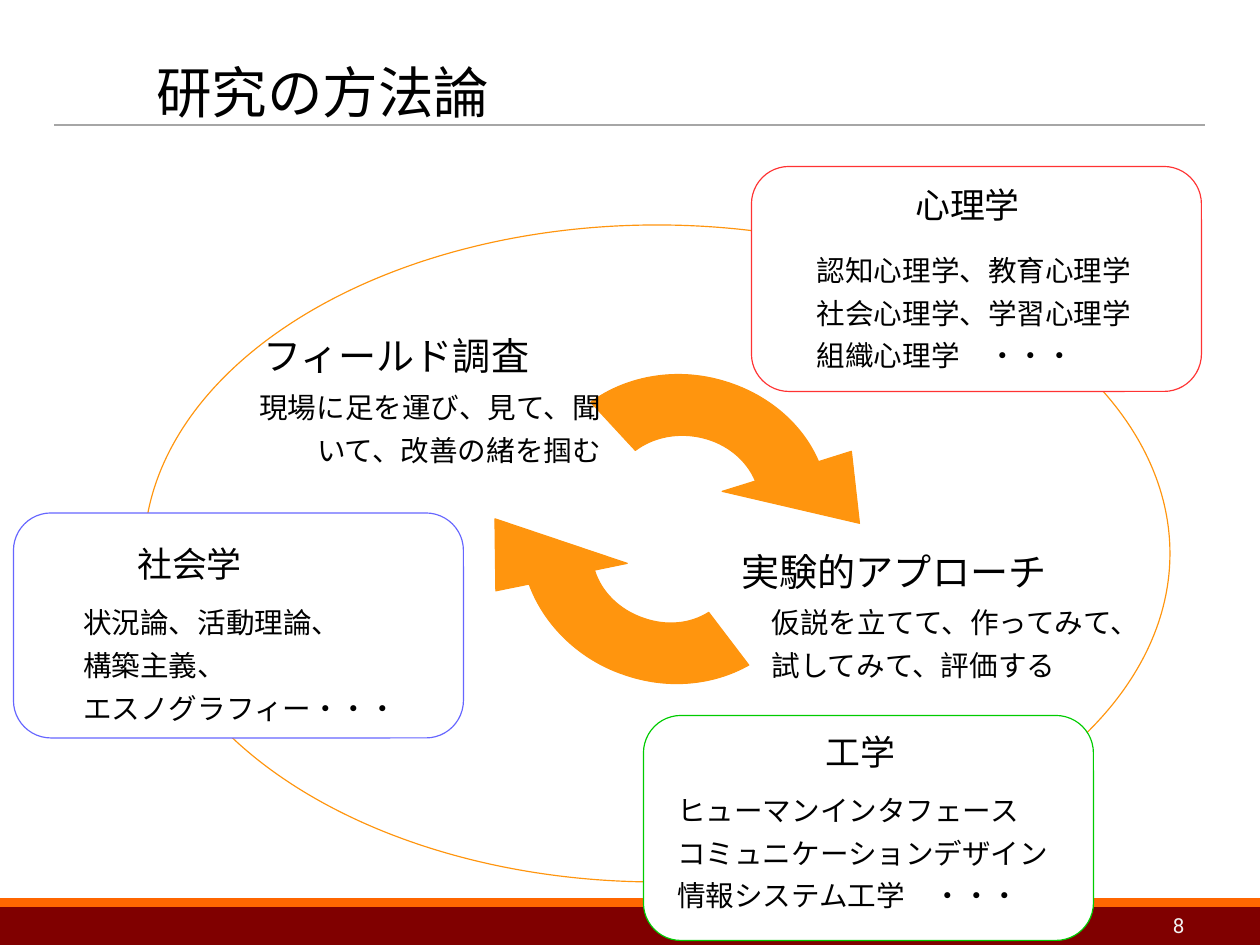
from lxml.etree import SubElement
from pptx import Presentation
from pptx.dml.color import RGBColor
from pptx.enum.shapes import MSO_CONNECTOR as Connector, MSO_SHAPE as Shape
from pptx.enum.text import MSO_ANCHOR as Anchor, PP_ALIGN as Align
from pptx.oxml.ns import qn
from pptx.util import Cm, Pt

BLACK = RGBColor(0x00, 0x00, 0x00)
WHITE = RGBColor(0xFF, 0xFF, 0xFF)
PALE = RGBColor(0xF2, 0xF2, 0xF2)
GRAY = RGBColor(0xA6, 0xA6, 0xA6)
ORANGE = RGBColor(0xFF, 0x95, 0x0E)
BAND_ORANGE = RGBColor(0xFF, 0x66, 0x00)
MAROON = RGBColor(0x80, 0x00, 0x00)
RED = RGBColor(0xFF, 0x33, 0x33)
BLUE = RGBColor(0x66, 0x66, 0xFF)
GREEN = RGBColor(0x00, 0xCC, 0x00)
JAPANESE_FONT = "Noto Sans CJK JP"
LATIN_FONT = "Roboto"

FIELDS = [
    (RED, (16.7, 3.7), "心理学", (20.09, 3.72), (17.9, 5.3),
     ["認知心理学、教育心理学", "社会心理学、学習心理学", "組織心理学　・・・"]),
    (BLUE, (0.3, 11.4), "社会学", (2.8, 11.7), (1.6, 13.13),
     ["状況論、活動理論、", "構築主義、\vエスノグラフィー・・・"]),
    (GREEN, (14.3, 15.9), "工学", (18.1, 15.87), (14.8, 17.3),
     ["ヒューマンインタフェース", "コミュニケーションデザイン", "情報システム工学　・・・"]),
]

ARROW_TO_EXPERIMENT = (
    [(16.79, 10.69), (16.59, 10.21), (16.15, 9.86), (15.62, 9.73),
     (15.09, 9.6), (14.53, 9.7), (14.12, 10.01)],
    [(13.13, 8.94), (13.89, 8.38), (14.94, 8.18), (15.93, 8.43),
     (16.97, 8.69), (17.81, 9.37), (18.19, 10.26)],
    [(18.92, 10.03), (19.1, 11.63), (16.05, 10.92)],
)
ARROW_TO_SURVEY = (
    [(13.21, 12.67), (13.36, 13.16), (13.77, 13.56), (14.3, 13.74),
     (14.81, 13.92), (15.34, 13.87), (15.75, 13.61)],
    [(16.64, 14.78), (15.82, 15.24), (14.81, 15.32), (13.87, 14.99),
     (12.88, 14.66), (12.09, 13.89), (11.76, 12.98)],
    [(11.02, 13.13), (11, 11.53), (13.94, 12.52)],
)


def paint(shape, fill, line, width=0.75):
    shape.shadow.inherit = False
    shape.fill.solid()
    shape.fill.fore_color.rgb = fill
    shape.line.color.rgb = line
    shape.line.width = Pt(width)


def add_block(slide, kind, left, top, width, height, fill, line, line_width=0.75):
    shape = slide.shapes.add_shape(kind, Cm(left), Cm(top), Cm(width), Cm(height))
    paint(shape, fill, line, line_width)


def add_text(slide, lines, left, top, width, height, size, color=BLACK,
             font=JAPANESE_FONT, align=Align.LEFT, anchor=Anchor.TOP, spacing=1.25):
    box = slide.shapes.add_textbox(Cm(left), Cm(top), Cm(width), Cm(height))
    frame = box.text_frame
    frame.word_wrap = True
    frame.vertical_anchor = anchor
    for index, line in enumerate(lines):
        paragraph = frame.add_paragraph() if index else frame.paragraphs[0]
        paragraph.text = line
        paragraph.alignment = align
        paragraph.line_spacing = spacing
        paragraph.font.size = Pt(size)
        paragraph.font.color.rgb = color
        paragraph.font.name = font
        defaults = paragraph._p.pPr.find(qn("a:defRPr"))
        SubElement(defaults, qn("a:ea")).set("typeface", JAPANESE_FONT)


def add_rule(slide, left, right, top):
    rule = slide.shapes.add_connector(
        Connector.STRAIGHT, Cm(left), Cm(top), Cm(right), Cm(top))
    rule.line.color.rgb = GRAY
    rule.line.width = Pt(1.5)
    SubElement(rule._element.spPr, qn("a:effectLst"))


def bend_lines(segments):
    for start in range(0, len(segments), 3):
        first, second, third = segments[start:start + 3]
        first.tag = qn("a:cubicBezTo")
        for segment in (second, third):
            first.append(segment[0])
            segment.getparent().remove(segment)


def add_curved_arrow(slide, inner, outer, head):
    points = [(Cm(x), Cm(y)) for x, y in inner + outer + head]
    builder = slide.shapes.build_freeform(*points[0])
    builder.add_line_segments(points[1:], close=True)
    arrow = builder.convert_to_shape()
    segments = list(arrow._element.iter(qn("a:lnTo")))
    outer_start = len(inner)
    bend_lines(segments[:outer_start - 1])
    bend_lines(segments[outer_start:outer_start + len(outer) - 1])
    paint(arrow, ORANGE, ORANGE)


def add_field(slide, color, corner, name, name_at, topics_at, topics):
    add_block(slide, Shape.ROUNDED_RECTANGLE, *corner, 10, 5, WHITE, color)
    add_text(slide, [name], *name_at, 3.8, 1.45, 22)
    add_text(slide, topics, *topics_at, 9.2, 3.13, 18)


def main():
    presentation = Presentation()
    presentation.slide_width = Cm(28)
    presentation.slide_height = Cm(21)
    slide = presentation.slides.add_slide(presentation.slide_layouts[6])

    add_block(slide, Shape.RECTANGLE, 0, 20, 28, 0.22, BAND_ORANGE, BAND_ORANGE, 2)
    add_block(slide, Shape.RECTANGLE, 0, 20.2, 28, 0.8, MAROON, MAROON, 2)
    add_rule(slide, 1.2, 26.78, 2.78)
    add_text(slide, ["8"], 20.07, 20.16, 6.5, 0.8, 13, PALE, LATIN_FONT,
             Align.RIGHT, Anchor.MIDDLE, 1)
    add_text(slide, ["研究の方法論"], 3.22, 0.84, 23.4, 2.4, 35, BLACK, LATIN_FONT,
             Align.LEFT, Anchor.MIDDLE, 1)

    add_block(slide, Shape.OVAL, 3.2, 5, 22.8, 14.6, WHITE, ORANGE)
    add_text(slide, ["フィールド調査"], 5.6, 7, 8.15, 1.68, 24)
    add_text(slide, ["実験的アプローチ"], 16.23, 11.8, 8.15, 1.68, 24)
    for arrow in (ARROW_TO_EXPERIMENT, ARROW_TO_SURVEY):
        add_curved_arrow(slide, *arrow)
    for field in FIELDS:
        add_field(slide, *field)
    add_text(slide, ["現場に足を運び、見て、聞いて、改善の緒を掴む"],
             5, 8.36, 8.6, 4.06, 18, align=Align.RIGHT)
    add_text(slide, ["仮説を立てて、作ってみて、", "試してみて、評価する"],
             16.9, 13.13, 11, 4.06, 18)

    presentation.save("out.pptx")


if __name__ == "__main__":
    main()
